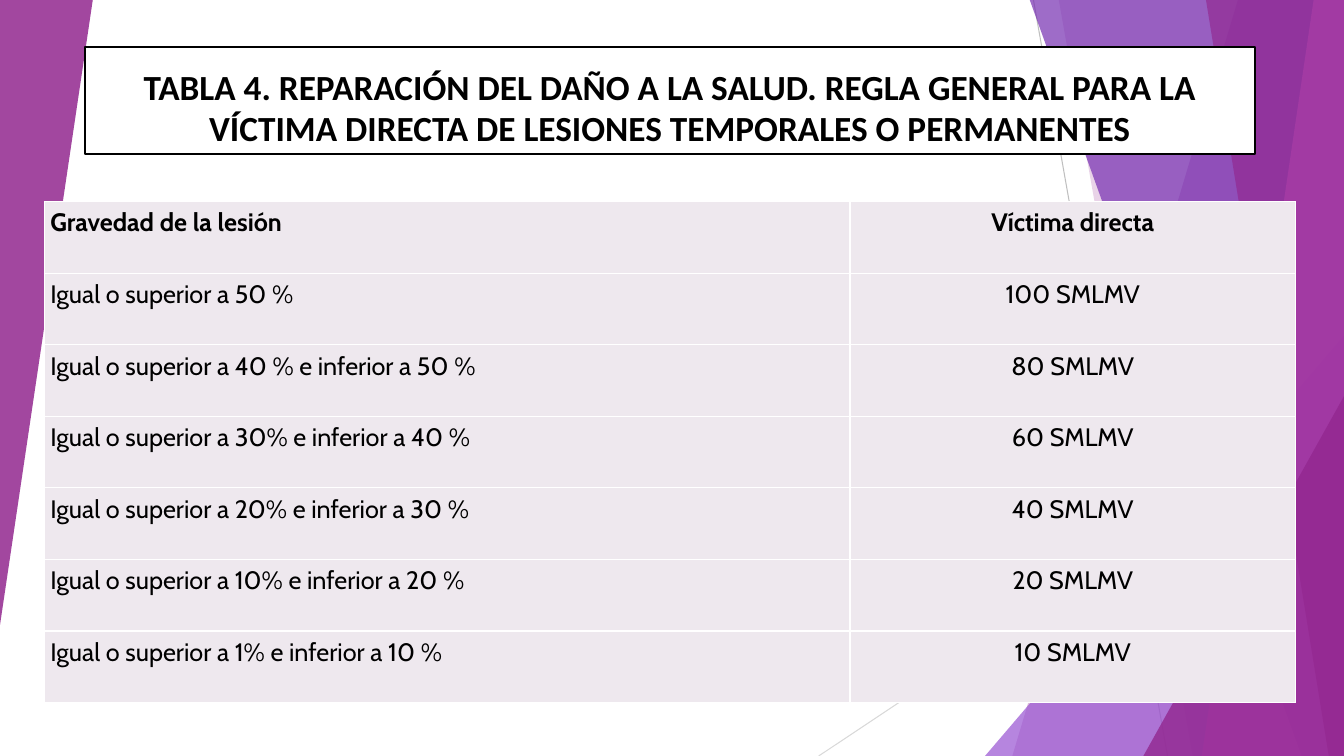
from lxml import etree
from pptx import Presentation
from pptx.dml.color import RGBColor
from pptx.enum import shapes, text
from pptx.oxml import ns
from pptx.util import Inches, Pt

TITLE = ("TABLA 4. REPARACIÓN DEL DAÑO A LA SALUD. REGLA GENERAL PARA LA "
         "VÍCTIMA DIRECTA DE LESIONES TEMPORALES O PERMANENTES")
COMPENSATION = [
    ("Gravedad de la lesión", "Víctima directa"),
    ("Igual o superior a 50 %", "100 SMLMV"),
    ("Igual o superior a 40 % e inferior a 50 %", "80 SMLMV"),
    ("Igual o superior a 30% e inferior a 40 %", "60 SMLMV"),
    ("Igual o superior a 20% e inferior a 30 %", "40 SMLMV"),
    ("Igual o superior a 10% e inferior a 20 %", "20 SMLMV"),
    ("Igual o superior a 1% e inferior a 10 %", "10 SMLMV"),
]
COLORS = {"ink": "000000", "paper": "FFFFFF", "cell": "EEE8EE",
          "steep line": "BFBFBF", "low line": "D9D9D9", "plum": "92278F",
          "lilac": "9B57D3", "violet": "762EB1", "pink": "D665D3"}
WIDTH, HEIGHT, TOP = 13.33, 7.5, -0.01
COLUMN_WIDTHS, ROW_HEIGHT, CELL_MARGIN = (7.99, 4.42), 0.71, 0.06

RAYS = [("steep line", (10.25, 0), (11.58, HEIGHT)),
        ("low line", (WIDTH, 4.03), (8.12, HEIGHT))]
# Back to front: bands are (color, opacity, top left x, bottom left x),
# wedges are (color, opacity, box, rotation).
BANDS_BEHIND = [("plum", 30, 12.28, 10.04), ("plum", 20, 10.5, 11.83)]
LILAC_WEDGE = ("lilac", 72, (9.77, 3.33, 3.56, 4.17), 0)
BANDS_FRONT = [("violet", 70, 10.21, 12.91), ("pink", 70, 13.03, 11.92),
               ("plum", 65, 11.96, 13.18)]
RIGHT_WEDGE = ("plum", 80, (11.34, 3.93, 1.99, 3.57), 0)
LEFT_WEDGE = ("plum", 85, (0, 0, 0.92, 6.2), 180)


def rgb(color):
    return RGBColor.from_string(COLORS[color])


def inches(values):
    return [Inches(value) for value in values]


def add_xml(parent, tag, **attributes):
    return etree.SubElement(parent, ns.qn(tag), attributes)


def paint(part, color, opacity):
    part.shadow.inherit = False
    part.line.fill.background()
    part.fill.solid()
    part.fill.fore_color.rgb = rgb(color)
    srgb = part.fill._xPr.find(".//" + ns.qn("a:srgbClr"))
    add_xml(srgb, "a:alpha", val=str(opacity * 1000))


def add_ray(slide, color, start, end):
    ray = slide.shapes.add_connector(
        shapes.MSO_CONNECTOR.STRAIGHT, *inches(start + end))
    ray.line.color.rgb = rgb(color)
    ray.line.width = Pt(0.75)
    add_xml(ray._element.spPr, "a:effectLst")


def add_band(slide, color, opacity, top_x, bottom_x):
    """Fill from a slanted left edge to the right side of the slide."""
    corners = [(top_x, TOP), (WIDTH, TOP), (WIDTH, HEIGHT), (bottom_x, HEIGHT)]
    start, *others = [tuple(inches(corner)) for corner in corners]
    builder = slide.shapes.build_freeform(*start)
    builder.add_line_segments(others, close=True)
    paint(builder.convert_to_shape(), color, opacity)


def add_wedge(slide, color, opacity, box, rotation):
    wedge = slide.shapes.add_shape(
        shapes.MSO_SHAPE.ISOSCELES_TRIANGLE, *inches(box))
    wedge.adjustments[0] = 1
    wedge.rotation = rotation
    paint(wedge, color, opacity)


def format_font(paragraph, name, size, bold):
    font = paragraph.runs[0].font
    font.name, font.size, font.bold = name, Pt(size), bold
    font.color.rgb = rgb("ink")


def add_title(slide):
    title = slide.shapes.add_shape(
        shapes.MSO_SHAPE.RECTANGLE, *inches((0.84, 0.47, 11.61, 1.06)))
    title.shadow.inherit = False
    title.fill.solid()
    title.fill.fore_color.rgb = rgb("paper")
    title.line.color.rgb = rgb("ink")
    title.line.width = Pt(1.5)
    frame = title.text_frame
    frame.word_wrap = True
    frame.vertical_anchor = text.MSO_ANCHOR.BOTTOM
    frame.text = TITLE
    paragraph = frame.paragraphs[0]
    paragraph.alignment = text.PP_ALIGN.CENTER
    paragraph.line_spacing = 0.96
    format_font(paragraph, "Calibri", 25.2, True)


def add_borders(cell):
    properties = cell._tc.get_or_add_tcPr()
    for side in ("a:lnL", "a:lnR", "a:lnT", "a:lnB"):
        border = add_xml(properties, side, w=str(Pt(1)))
        fill = add_xml(border, "a:solidFill")
        add_xml(fill, "a:srgbClr", val=COLORS["paper"])


def add_compensation_table(slide):
    row_count = len(COMPENSATION)
    table = slide.shapes.add_table(
        row_count, len(COLUMN_WIDTHS),
        *inches((0.44, 2, sum(COLUMN_WIDTHS), ROW_HEIGHT * row_count))).table
    for column, width in zip(table.columns, COLUMN_WIDTHS):
        column.width = Inches(width)
    for r, values in enumerate(COMPENSATION):
        table.rows[r].height = Inches(ROW_HEIGHT)
        for c, value in enumerate(values):
            cell = table.cell(r, c)
            cell.margin_left = cell.margin_right = Inches(CELL_MARGIN)
            cell.margin_top = cell.margin_bottom = Inches(CELL_MARGIN)
            add_borders(cell)
            cell.fill.solid()
            cell.fill.fore_color.rgb = rgb("cell")
            cell.text_frame.text = value
            paragraph = cell.text_frame.paragraphs[0]
            if c == 1:
                paragraph.alignment = text.PP_ALIGN.CENTER
                paragraph.space_after = Pt(8)
            elif r > 0:
                paragraph.alignment = text.PP_ALIGN.JUSTIFY
            format_font(paragraph, "Cabin", 18, r == 0)


def main():
    deck = Presentation()
    deck.slide_width, deck.slide_height = inches((WIDTH, HEIGHT))
    slide = deck.slides.add_slide(deck.slide_layouts[6])
    for ray in RAYS:
        add_ray(slide, *ray)
    for band in BANDS_BEHIND:
        add_band(slide, *band)
    add_wedge(slide, *LILAC_WEDGE)
    for band in BANDS_FRONT:
        add_band(slide, *band)
    for wedge in (RIGHT_WEDGE, LEFT_WEDGE):
        add_wedge(slide, *wedge)
    add_title(slide)
    add_compensation_table(slide)
    deck.save("out.pptx")


if __name__ == "__main__":
    main()
